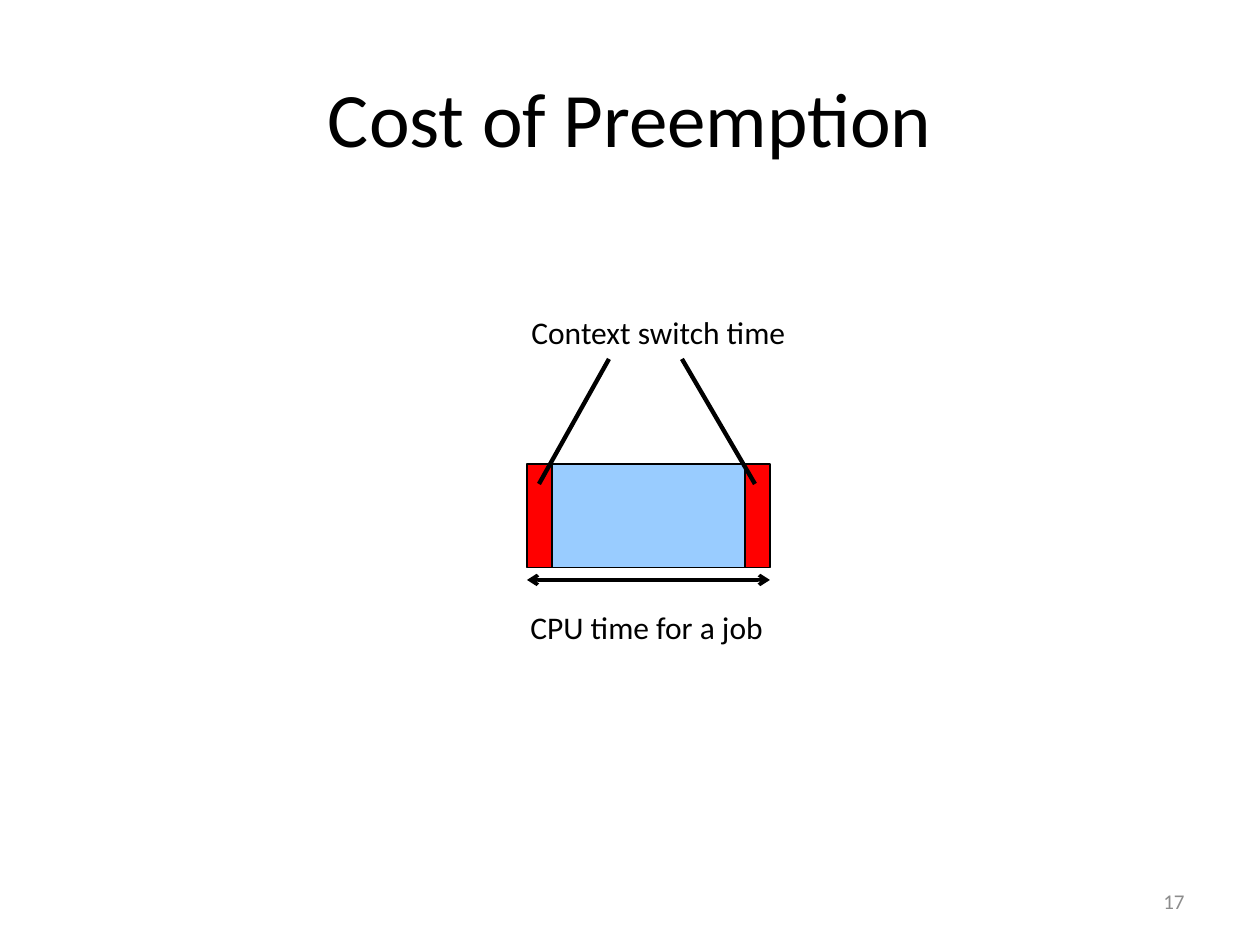
from lxml.etree import SubElement
from pptx import Presentation
from pptx.dml.color import RGBColor
from pptx.enum.shapes import MSO_CONNECTOR, MSO_SHAPE
from pptx.enum.text import MSO_ANCHOR, PP_ALIGN
from pptx.oxml.ns import qn
from pptx.util import Pt

PX = 914400 // 126
BLACK = RGBColor(0x00, 0x00, 0x00)
GREY = RGBColor(0x8C, 0x8C, 0x8C)
RED = RGBColor(0xFF, 0x00, 0x00)
BLUE = RGBColor(0x99, 0xCC, 0xFF)


def px(*lengths):
    """Turn pixel lengths into EMU."""
    return [n * PX for n in lengths]


def write(tf, text, size=18, color=BLACK, align=PP_ALIGN.LEFT,
          anchor=MSO_ANCHOR.TOP, wrap=False):
    """Put one formatted line of text into a text frame."""
    tf.word_wrap = wrap
    tf.vertical_anchor = anchor
    p = tf.paragraphs[0]
    p.alignment = align
    r = p.add_run()
    r.text = text
    r.font.name = "Calibri"
    r.font.size = Pt(size)
    r.font.color.rgb = color


def add_title(s, text, box):
    """Place and fill the title placeholder."""
    sp = s.shapes.title
    sp.left, sp.top, sp.width, sp.height = px(*box)
    write(sp.text_frame, text, size=44, align=PP_ALIGN.CENTER,
          anchor=MSO_ANCHOR.MIDDLE, wrap=True)


def add_label(s, text, box, **fmt):
    """Add a text box."""
    write(s.shapes.add_textbox(*px(*box)).text_frame, text, **fmt)


def add_block(s, box, fill):
    """Add a thinly outlined rectangle."""
    sp = s.shapes.add_shape(MSO_SHAPE.RECTANGLE, *px(*box))
    sp.shadow.inherit = False
    sp.fill.solid()
    sp.fill.fore_color.rgb = fill
    sp.line.color.rgb = BLACK
    sp.line.width = Pt(0.75)


def add_line(s, start, end, width, arrows=False):
    """Add a straight line, with arrowheads at both ends on request."""
    sp = s.shapes.add_connector(MSO_CONNECTOR.STRAIGHT, *px(*start, *end))
    sp.line.color.rgb = BLACK
    sp.line.width = Pt(width)
    SubElement(sp._element.spPr, qn("a:effectLst"))
    if arrows:
        for tag in ("a:headEnd", "a:tailEnd"):
            SubElement(sp.line._get_or_add_ln(), qn(tag), type="arrow")


def main():
    """Build the slide."""
    prs = Presentation()
    prs.slide_width, prs.slide_height = px(1260, 945)
    s = prs.slides.add_slide(prs.slide_layouts[5])

    add_title(s, "Cost of Preemption", (63, 38, 1134, 157))
    add_label(s, "17", (903, 876, 294, 50), size=12, color=GREY,
              align=PP_ALIGN.RIGHT, anchor=MSO_ANCHOR.MIDDLE, wrap=True)

    left, top, height = 527, 464, 104
    switch, work = 25, 193
    work_left = left + switch
    work_right = work_left + work
    right = work_right + switch
    add_block(s, (work_left, top, work, height), BLUE)
    for x in (left, work_right):
        add_block(s, (x, top, switch, height), RED)

    add_label(s, "Context switch time", (519, 307, 282, 50))
    for label_x, block_x in ((609, 539), (682, 755)):
        add_line(s, (block_x, 484), (label_x, 359), 2.5)

    add_line(s, (left, 580), (right, 580), 2, arrows=True)
    add_label(s, "CPU time for a job", (518, 602, 261, 50))

    prs.save("out.pptx")


if __name__ == "__main__":
    main()
